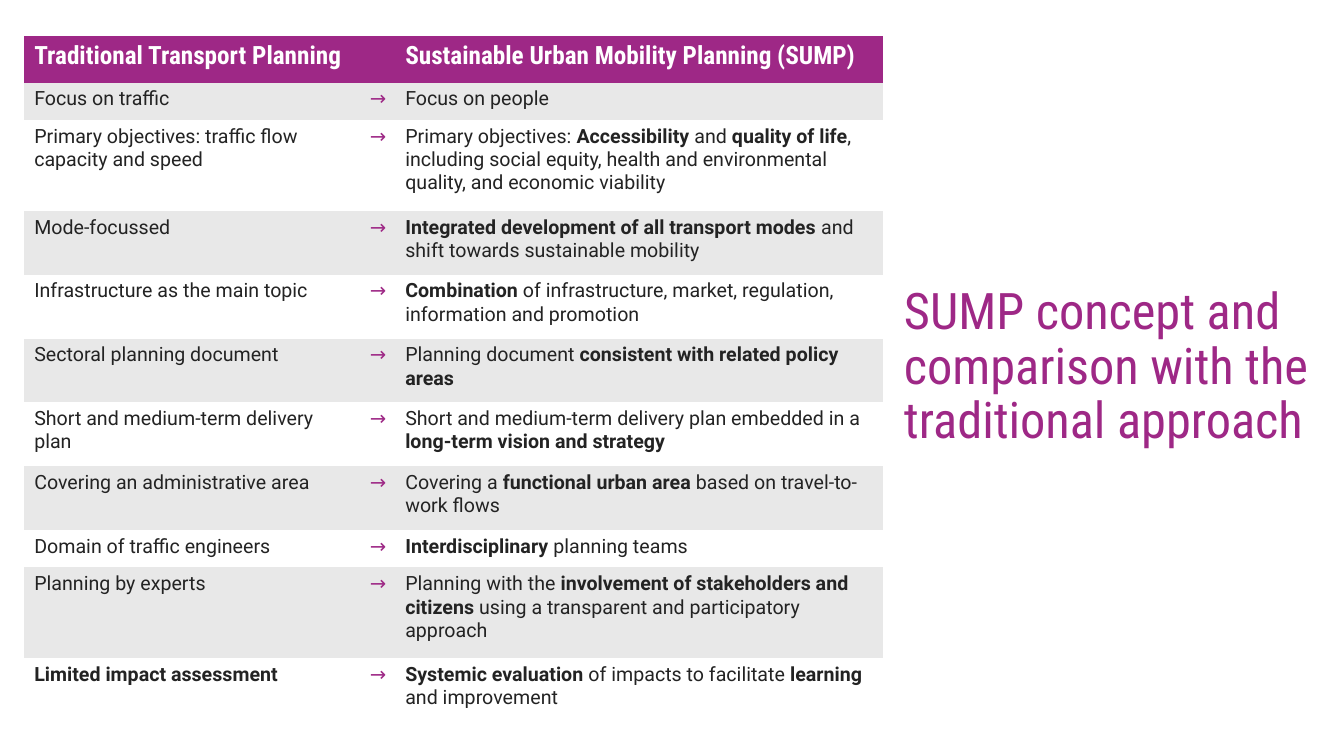
from pptx import Presentation
from pptx.dml.color import RGBColor
from pptx.enum.text import MSO_ANCHOR
from pptx.oxml.ns import qn
from pptx.util import Cm, Pt

COLORS = {
    "purple": "9E2886",
    "arrow": "9E2986",
    "text": "232323",
    "grey": "E8E8E8",
    "white": "FFFFFF",
}
NO_GRID_STYLE = "{2D5ABB26-0587-4C30-8999-92F81FD0307C}"
HEADER = ("Traditional Transport Planning", "", "Sustainable Urban Mobility Planning (SUMP)")
COLUMN_WIDTHS = (8.46, 0.89, 12.29)
HEADER_HEIGHT = 1.17
LINE_HEIGHTS = {1: 0.94, 2: 1.61, 3: 2.29}
COMPARISON = [
    (1, "Focus on traffic", "Focus on people"),
    (3, "Primary objectives: traffic flow capacity and speed",
     "Primary objectives: **Accessibility **and **quality of life**, including social equity, "
     "health and environmental quality, and economic viability"),
    (2, "Mode-focussed",
     "**Integrated development of all transport modes **and shift towards sustainable mobility"),
    (2, "Infrastructure as the main topic",
     "**Combination **of infrastructure, market, regulation, information and promotion"),
    (2, "Sectoral planning document",
     "Planning document **consistent with related policy areas**"),
    (2, "Short and medium-term delivery plan",
     "Short and medium-term delivery plan embedded in a **long-term vision and strategy**"),
    (2, "Covering an administrative area",
     "Covering a **functional urban area **based on travel-to-work flows"),
    (1, "Domain of traffic engineers", "**Interdisciplinary **planning teams"),
    (3, "Planning by experts",
     "Planning with the **involvement of stakeholders and citizens **"
     "using a transparent and participatory approach"),
    (2, "**Limited impact assessment**",
     "**Systemic evaluation **of impacts to facilitate **learning **and improvement"),
]


def rgb(name):
    return RGBColor.from_string(COLORS[name])


def write_text(tf, text, size=14, font="Roboto", color="text", bold=False, line_spacing=None):
    p = tf.paragraphs[0]
    if line_spacing:
        p.line_spacing = line_spacing
    for i, part in enumerate(text.split("**")):
        if part:
            r = p.add_run()
            r.text = part
            r.font.size = Pt(size)
            r.font.name = font
            r.font.bold = bold or i % 2 == 1
            r.font.color.rgb = rgb(color)


def fill_row(row, texts, fill, formats):
    for cell, text, text_format in zip(row.cells, texts, formats):
        cell.fill.solid()
        cell.fill.fore_color.rgb = rgb(fill)
        write_text(cell.text_frame, text, **text_format)


def add_comparison_table(s, left, top):
    heights = [HEADER_HEIGHT] + [LINE_HEIGHTS[lines] for lines, _, _ in COMPARISON]
    frame = s.shapes.add_table(len(heights), len(COLUMN_WIDTHS), Cm(left), Cm(top),
                               Cm(sum(COLUMN_WIDTHS)), Cm(sum(heights)))
    table = frame.table
    table.horz_banding = False
    table._tbl.tblPr.find(qn("a:tableStyleId")).text = NO_GRID_STYLE
    for column, width in zip(table.columns, COLUMN_WIDTHS):
        column.width = Cm(width)
    for row, height in zip(table.rows, heights):
        row.height = Cm(height)

    header_format = dict(size=18, font="Roboto Condensed", color="white", bold=True)
    fill_row(table.rows[0], HEADER, "purple", [header_format] * 3)
    body_formats = ({}, {"color": "arrow"}, {})
    for i, (_, traditional, sump) in enumerate(COMPARISON):
        fill = "white" if i % 2 else "grey"
        fill_row(table.rows[i + 1], (traditional, "→", sump), fill, body_formats)


def add_title(s, text, left, top, width, height):
    tf = s.shapes.add_textbox(Cm(left), Cm(top), Cm(width), Cm(height)).text_frame
    tf.word_wrap = True
    tf.vertical_anchor = MSO_ANCHOR.TOP
    write_text(tf, text, size=36, font="Roboto Condensed", color="purple", line_spacing=0.9)


def main():
    prs = Presentation()
    prs.slide_width = Cm(33.87)
    prs.slide_height = Cm(19.05)
    s = prs.slides.add_slide(prs.slide_layouts[6])
    add_comparison_table(s, 0.61, 0.91)
    add_title(s, "SUMP concept and comparison with the traditional approach",
              22.53, 7.09, 10.8, 4.88)
    prs.save("out.pptx")


if __name__ == "__main__":
    main()
